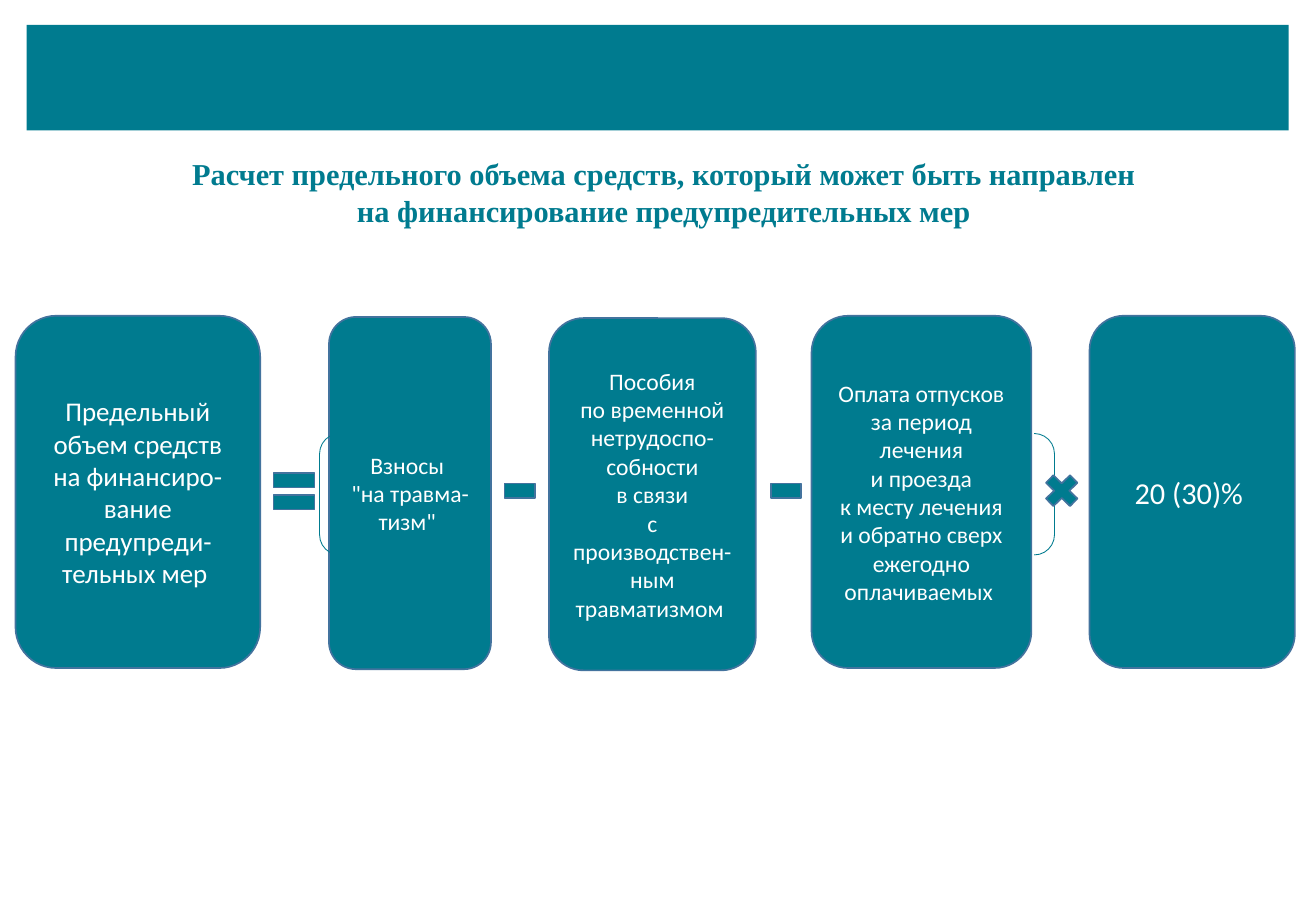
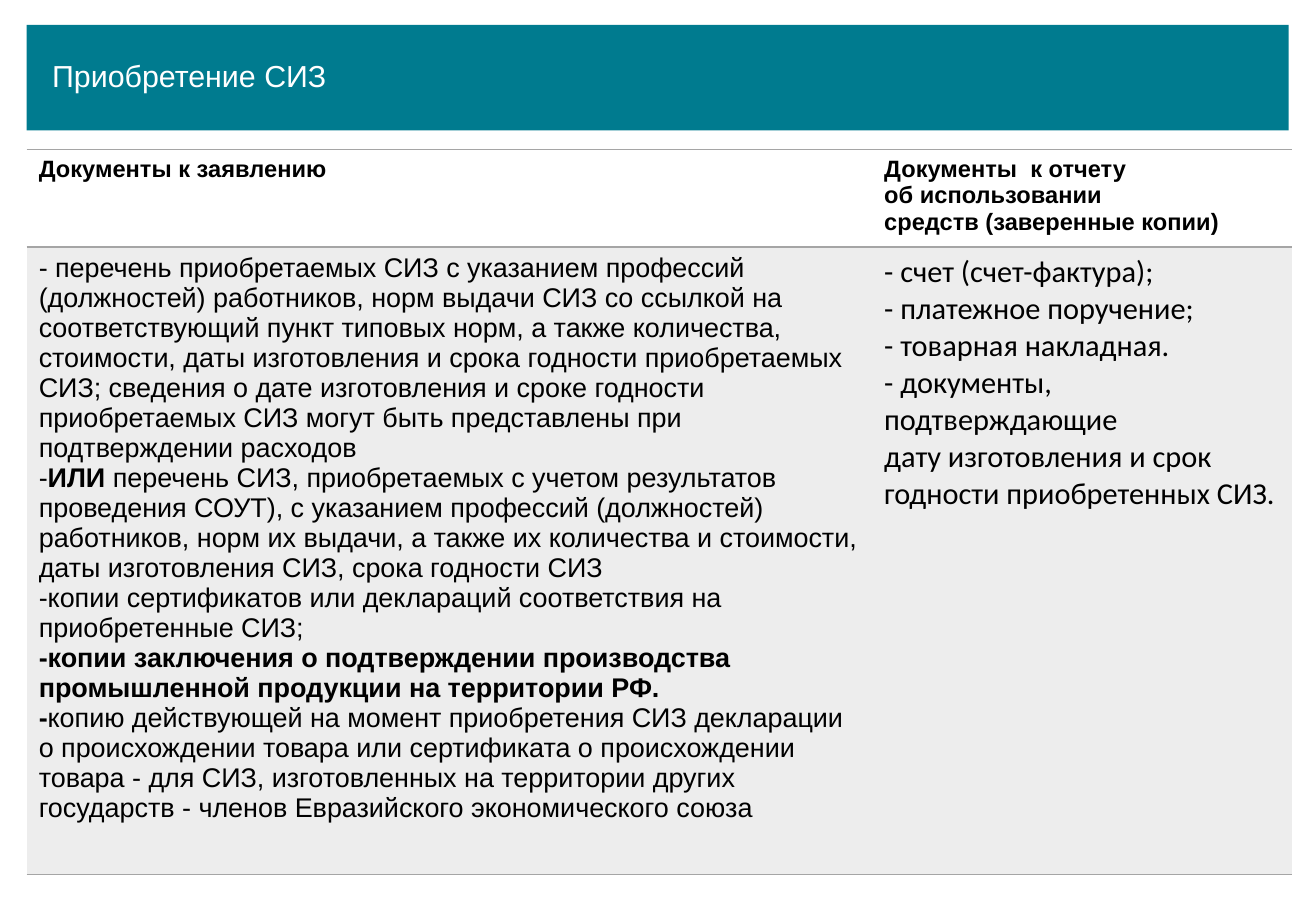
"""Two slides on financing preventive measures: a formula and a table of documents."""
from dataclasses import dataclass
from typing import NamedTuple

from lxml.etree import SubElement
from pptx import Presentation
from pptx.dml.color import RGBColor as RGB
from pptx.enum.shapes import MSO_SHAPE as SHAPE
from pptx.enum.text import MSO_ANCHOR as ANCHOR, PP_ALIGN as ALIGN
from pptx.oxml.ns import qn
from pptx.util import Pt


@dataclass(frozen=True)
class Theme:
    teal: RGB = RGB.from_string("007B8F")
    edge: RGB = RGB.from_string("43739E")
    white: RGB = RGB.from_string("FFFFFF")
    black: RGB = RGB.from_string("000000")
    rule: RGB = RGB.from_string("A5A5A5")
    panel: RGB = RGB.from_string("EDEDED")
    sans: str = "Arial"
    body: str = "Calibri"
    serif: str = "Times New Roman"
    small: int = 14
    medium: int = 16
    large: int = 18


T = Theme()


class Area(NamedTuple):
    x: float
    y: float
    w: float
    h: float

    def pts(self) -> list:
        return [Pt(v) for v in self]


class Style(NamedTuple):
    font: str
    size: int
    color: RGB
    bold: bool = False


class Run(NamedTuple):
    text: str
    bold: bool = False


class Term(NamedTuple):
    x: float
    y: float
    w: float
    size: int
    paras: list


class Sign(NamedTuple):
    kind: SHAPE
    area: Area


BAND = Area(15.8, 14.8, 748, 62.6)
TERM_H = 208.8
TERMS = [
    Term(9.2, 187.2, 145, T.medium,
         ["Предельный объем средств на финансиро-вание предупреди-тельных мер "]),
    Term(481, 187.2, 130.3, T.small,
         ["Оплата отпусков за период лечения\nи проезда\n"
          "к месту лечения и обратно сверх ежегодно оплачиваемых "]),
    Term(645.8, 187.2, 121.7, T.large, ["20 (30)% "]),
    Term(195, 187.9, 96, T.small, ["Взносы ", "\"на травма-тизм\" "]),
    Term(325.4, 188.6, 122.6, T.small,
         ["Пособия\nпо временной нетрудоспо-собности", "в связи",
          "с производствен-ным травматизмом "]),
]
BRACKETS = Area(189.4, 257, 435.6, 72)
SIGNS = [
    Sign(SHAPE.MATH_EQUAL, Area(157.7, 272.8, 33.1, 36.7)),
    Sign(SHAPE.MATH_MINUS, Area(295.9, 272.8, 24.5, 36)),
    Sign(SHAPE.MATH_MINUS, Area(453.6, 272.8, 24.5, 36)),
    Sign(SHAPE.MATH_MULTIPLY, Area(615.6, 277.6, 27.4, 26.6)),
]
TABLE = Area(15.8, 88.6, 750.2, 429.8)
COL_WIDTHS = (501.1, 249.1)
ROW_HEIGHTS = (57.8, 372)
HEADS = [
    ["Документы к заявлению"],
    ["Документы  к отчету\nоб использовании", "средств (заверенные копии)"],
]
APPLICATION = [
    "- перечень приобретаемых СИЗ с указанием профессий (должностей) работников, "
    "норм выдачи СИЗ со ссылкой на соответствующий пункт типовых норм, а также "
    "количества, стоимости, даты изготовления и срока годности приобретаемых СИЗ; "
    "сведения о дате изготовления и сроке годности приобретаемых СИЗ могут быть "
    "представлены при подтверждении расходов",
    [Run("-"), Run("ИЛИ", True),
     Run(" перечень СИЗ, приобретаемых с учетом результатов проведения СОУТ), "
         "с указанием профессий (должностей) работников, норм их выдачи, а также "
         "их количества и стоимости, даты изготовления СИЗ, срока годности СИЗ")],
    "-копии сертификатов или деклараций соответствия на приобретенные СИЗ;",
    [Run("-копии заключения о подтверждении производства промышленной продукции "
         "на территории РФ.", True)],
    [Run("-", True),
     Run("копию действующей на момент приобретения СИЗ декларации о происхождении "
         "товара или сертификата о происхождении товара - для СИЗ, изготовленных на "
         "территории других государств - членов Евразийского экономического союза")],
]
REPORT = [
    "- счет (счет-фактура);",
    "- платежное поручение;",
    "- товарная накладная.",
    "- документы, подтверждающие",
    "дату изготовления и срок годности приобретенных СИЗ.",
]


def write(tf, paras: list, style: Style, align: ALIGN = ALIGN.LEFT) -> None:
    tf.word_wrap = True
    for i, para in enumerate(paras):
        p = tf.add_paragraph() if i else tf.paragraphs[0]
        p.alignment = align
        for run in [Run(para)] if isinstance(para, str) else para:
            for n, line in enumerate(run.text.split("\n")):
                if n:
                    p.add_line_break()
                r = p.add_run()
                r.text = line
                f = r.font
                f.name, f.size = style.font, Pt(style.size)
                f.bold = style.bold or run.bold
                f.color.rgb = style.color


def shape(s, kind: SHAPE, area: Area, fill: RGB | None = T.teal,
          line: RGB | None = T.edge, width: float = 1):
    sp = s.shapes.add_shape(kind, *area.pts())
    sp.shadow.inherit = False
    if fill is None:
        sp.fill.background()
    else:
        sp.fill.solid()
        sp.fill.fore_color.rgb = fill
    if line is None:
        sp.line.fill.background()
    else:
        sp.line.color.rgb = line
        sp.line.width = Pt(width)
    return sp


def label(s, area: Area, text: str, style: Style, align: ALIGN = ALIGN.LEFT) -> None:
    write(s.shapes.add_textbox(*area.pts()).text_frame, [text], style, align)


def banded_slide(prs):
    s = prs.slides.add_slide(prs.slide_layouts[6])
    shape(s, SHAPE.RECTANGLE, BAND, line=None)
    return s


def border(cell, side: str, color: RGB | None) -> None:
    ln = SubElement(cell._tc.get_or_add_tcPr(), qn(f"a:ln{side}"), w=str(Pt(1)))
    if color is None:
        SubElement(ln, qn("a:noFill"))
    else:
        SubElement(SubElement(ln, qn("a:solidFill")), qn("a:srgbClr"), val=str(color))


def fill_cell(cell, paras: list, style: Style, fill: RGB | None) -> None:
    for side, color in zip("LRTB", (None, None, T.rule, T.rule)):
        border(cell, side, color)
    if fill is None:
        cell.fill.background()
    else:
        cell.fill.solid()
        cell.fill.fore_color.rgb = fill
    write(cell.text_frame, paras, style)


def formula_slide(prs) -> None:
    s = banded_slide(prs)
    label(s, Area(23, 88.6, 740.9, 51.1),
          "Расчет предельного объема средств, который может быть направлен\n"
          "на финансирование предупредительных мер",
          Style(T.serif, T.large, T.teal, True), ALIGN.CENTER)
    for term in TERMS:
        sp = shape(s, SHAPE.ROUNDED_RECTANGLE, Area(term.x, term.y, term.w, TERM_H))
        sp.text_frame.vertical_anchor = ANCHOR.MIDDLE
        write(sp.text_frame, term.paras, Style(T.body, term.size, T.white), ALIGN.CENTER)
    shape(s, SHAPE.DOUBLE_BRACKET, BRACKETS, None, T.teal, 0.5)
    for sign in SIGNS:
        shape(s, sign.kind, sign.area)


def documents_slide(prs) -> None:
    s = banded_slide(prs)
    label(s, Area(23.8, 30.2, 323.3, 51.1), "Приобретение СИЗ",
          Style(T.sans, T.large, T.white))
    tbl = s.shapes.add_table(2, 2, *TABLE.pts()).table
    tbl.first_row = tbl.horz_banding = False
    for col, w in zip(tbl.columns, COL_WIDTHS):
        col.width = Pt(w)
    for row, h in zip(tbl.rows, ROW_HEIGHTS):
        row.height = Pt(h)
    for c, head in enumerate(HEADS):
        fill_cell(tbl.cell(0, c), head, Style(T.sans, T.small, T.black, True), None)
    fill_cell(tbl.cell(1, 0), APPLICATION, Style(T.sans, T.medium, T.black), T.panel)
    fill_cell(tbl.cell(1, 1), REPORT, Style(T.body, T.large, T.black), T.panel)


def main() -> None:
    prs = Presentation()
    prs.slide_width, prs.slide_height = Pt(780), Pt(540)
    formula_slide(prs)
    documents_slide(prs)
    prs.save("out.pptx")


if __name__ == "__main__":
    main()
